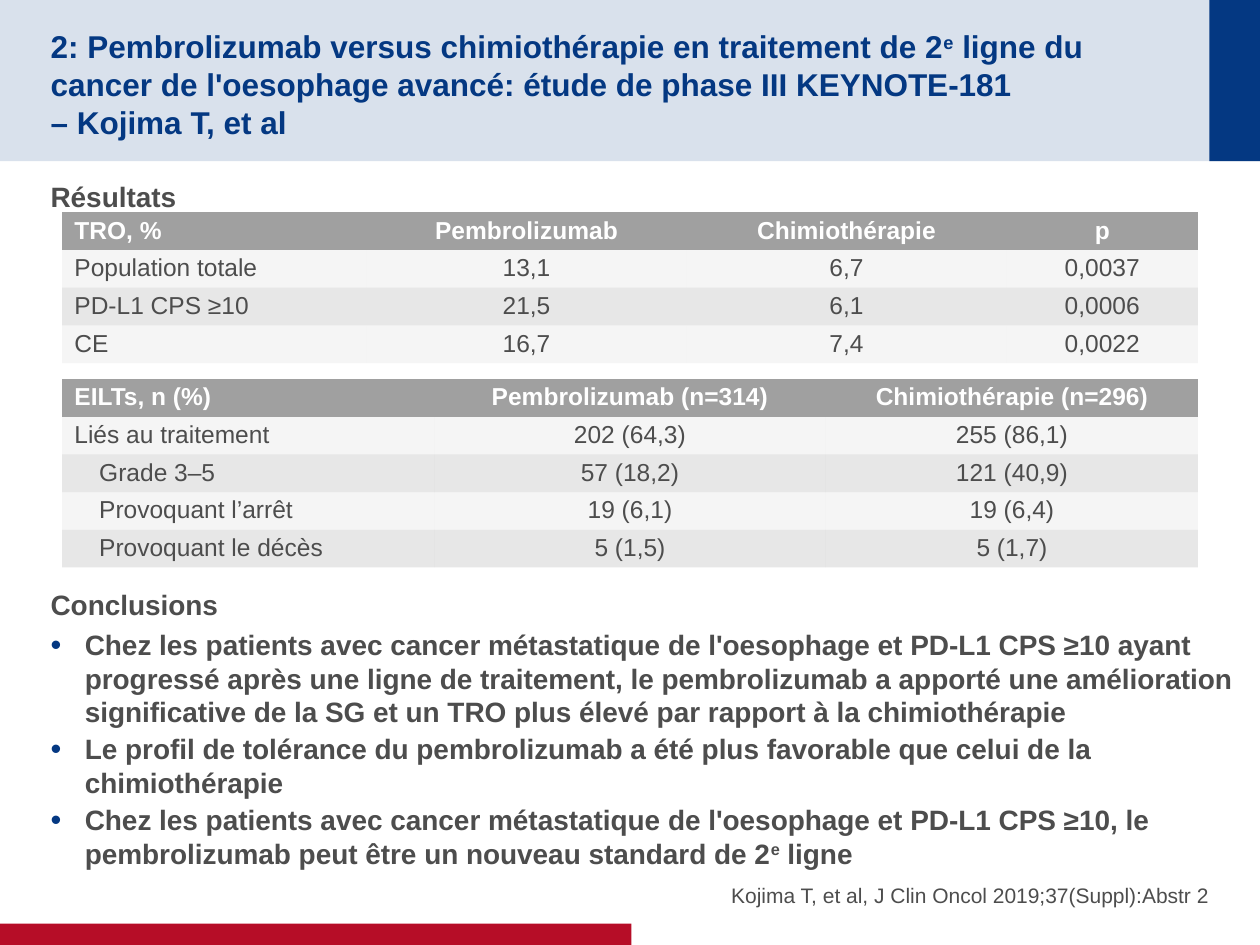
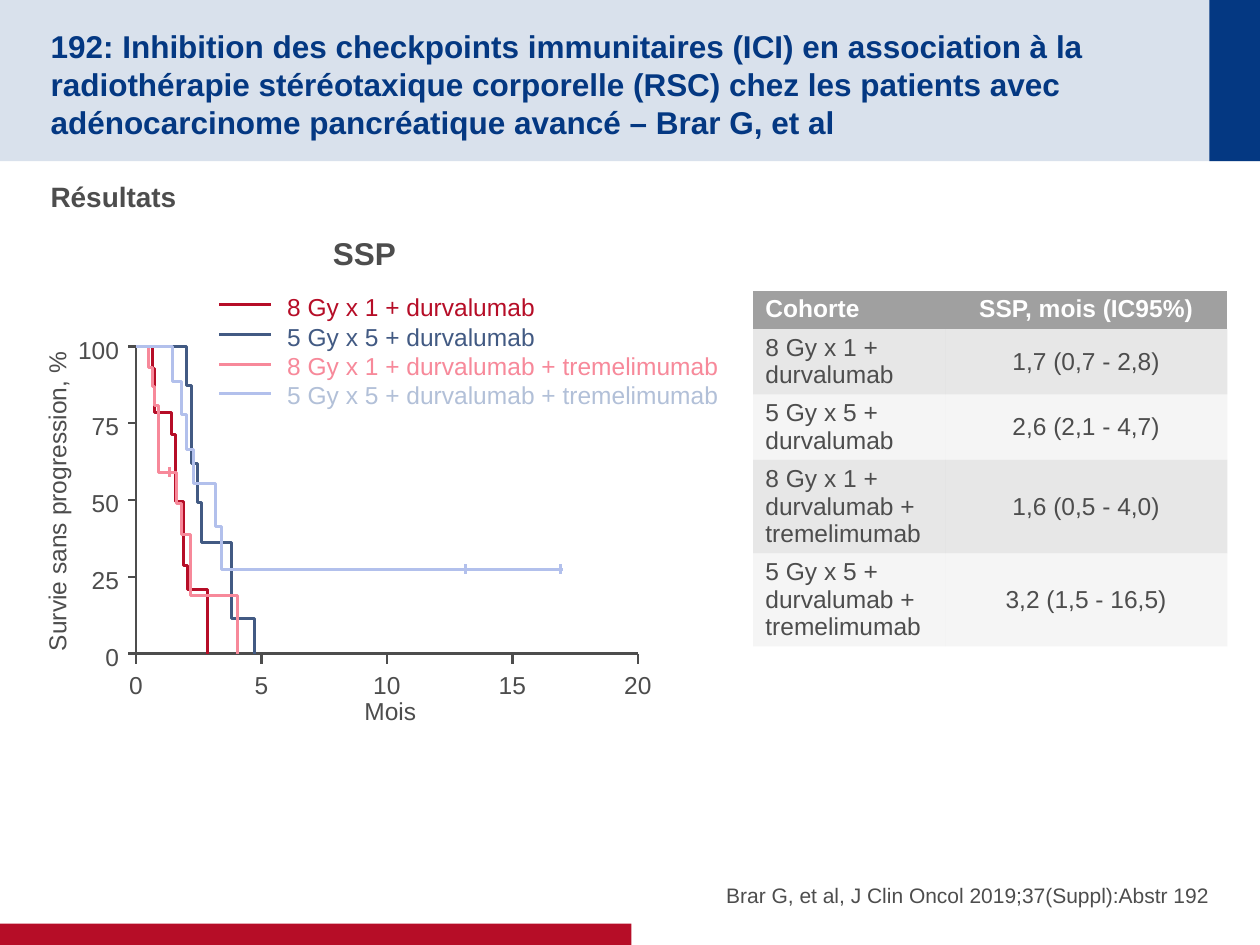
from dataclasses import dataclass

from lxml.etree import SubElement
from pptx import Presentation
from pptx.dml.color import RGBColor
from pptx.enum.shapes import MSO_CONNECTOR as Connector, MSO_SHAPE as Preset
from pptx.enum.text import MSO_ANCHOR as Anchor, MSO_AUTO_SIZE as AutoSize, PP_ALIGN as Align
from pptx.oxml.ns import qn
from pptx.util import Cm, Pt


@dataclass(frozen=True)
class Theme:
    font: str = "Arial"
    navy: str = "043882"
    red: str = "B60D27"
    text: str = "4D4D4D"
    grey: str = "A0A0A0"
    white: str = "FFFFFF"
    steel: str = "425A83"
    pink: str = "F7899A"
    pale_text: str = "B2C0D8"
    pale_line: str = "B2C0EC"
    title_size: int = 18
    body_size: int = 16
    small_size: int = 14
    citation_size: int = 12
    axis_width: float = 1.5
    curve_width: float = 1.75


THEME = Theme()
NO_STYLE_TABLE = "{2D5ABB26-0587-4C30-8999-92F81FD0307C}"


def write(paragraph, text, size=THEME.small_size, color=THEME.text, bold=False,
          align=Align.LEFT, before=0, after=0, indent=0, bullet=False):
    paragraph.alignment = align
    paragraph.space_before, paragraph.space_after = Pt(before), Pt(after)
    properties = paragraph._p.get_or_add_pPr()
    hanging = Cm(0.69) if bullet else 0
    properties.set("marL", str(Cm(indent) + hanging))
    properties.set("indent", str(-hanging))
    if bullet:
        bullet_color = SubElement(properties, qn("a:buClr"))
        SubElement(bullet_color, qn("a:srgbClr"), val=THEME.navy)
        SubElement(properties, qn("a:buSzPct"), val="110000")
        SubElement(properties, qn("a:buFont"), typeface=THEME.font)
        SubElement(properties, qn("a:buChar"), char="•")
    else:
        SubElement(properties, qn("a:buNone"))
    for part_number, part in enumerate(text.split("^")):
        for line_number, line in enumerate(part.split("\n")):
            if line_number:
                paragraph.add_line_break()
                SubElement(paragraph._p[-1], qn("a:rPr"), sz=str(size * 100))
            run = paragraph.add_run()
            run.text = line
            run.font.name, run.font.size, run.font.bold = THEME.font, Pt(size), bold
            run.font.color.rgb = RGBColor.from_string(color)
            if part_number % 2:
                run.font._element.set("baseline", "30000")


def paint(fill, properties, color, opacity=100):
    fill.solid()
    fill.fore_color.rgb = RGBColor.from_string(color)
    if opacity < 100:
        color_element = properties.find(qn("a:solidFill"))[0]
        SubElement(color_element, qn("a:alpha"), val=str(opacity * 1000))


def stroke(line, color, width):
    line.color.rgb = RGBColor.from_string(color)
    line.width = Pt(width)


class Deck:
    def __init__(self, theme):
        self.theme = theme
        self.presentation = Presentation()
        self.presentation.slide_width, self.presentation.slide_height = Cm(25.4), Cm(19.05)
        self.slide = None

    def add_slide(self, title, body, citation, body_width):
        first = self.slide is None
        self.slide = self.presentation.slides.add_slide(self.presentation.slide_layouts[3])
        if first:
            self.add_master_bands()
        heading, content, source = self.slide.placeholders
        self.fill_frame(heading, (1.02, 0.51, 22.89, 2.24),
                        [(title, dict(size=self.theme.title_size, color=self.theme.navy, bold=True))],
                        Anchor.MIDDLE, (0.13, 0))
        body_format = dict(size=self.theme.body_size, bold=True)
        self.fill_frame(content, (1.02, 3.48, body_width, 13.18),
                        [(text, body_format | extra) for text, extra in body],
                        margins=(0.13, 0.13))
        self.fill_frame(source, (12.9, 16.94, 11.48, 1.35),
                        [(citation, dict(size=self.theme.citation_size, align=Align.RIGHT, after=4))],
                        Anchor.BOTTOM)

    def add_master_bands(self):
        tree = self.presentation.slide_master.element.cSld.spTree
        bands = [
            ((0, 0, 25.4, 3.25), self.theme.navy, 15),
            ((24.38, 0, 1.02, 3.25), self.theme.navy, 100),
            ((0, 18.62, 12.73, 0.43), self.theme.red, 100),
        ]
        for number, (box, color, opacity) in enumerate(bands):
            band = self.slide.shapes.add_shape(Preset.RECTANGLE, *map(Cm, box))
            band.shadow.inherit = False
            paint(band.fill, band.element.spPr, color, opacity)
            band.line.fill.background()
            band.element.nvSpPr.cNvPr.set("id", str(100 + number))
            tree.insert(2 + number, band.element)

    def fill_frame(self, shape, box, paragraphs, anchor=Anchor.TOP, margins=(0, 0)):
        shape.left, shape.top, shape.width, shape.height = map(Cm, box)
        frame = shape.text_frame
        frame.auto_size, frame.word_wrap = AutoSize.NONE, True
        frame.vertical_anchor = anchor
        frame.margin_left = frame.margin_right = 0
        frame.margin_top, frame.margin_bottom = map(Cm, margins)
        for number, (text, text_format) in enumerate(paragraphs):
            paragraph = frame.add_paragraph() if number else frame.paragraphs[0]
            write(paragraph, text, **text_format)

    def add_text(self, box, paragraphs, anchor=Anchor.TOP, rotation=0):
        shape = self.slide.shapes.add_textbox(*map(Cm, box))
        self.fill_frame(shape, box, paragraphs, anchor)
        shape.rotation = rotation

    def add_label(self, text, center_x, center_y, width=2, align=Align.CENTER, rotation=0):
        height = 0.86
        box = (center_x - width / 2, center_y - height / 2, width, height)
        self.add_text(box, [(text, dict(align=align))], Anchor.MIDDLE, rotation)

    def add_line(self, start, end, color, width):
        line = self.slide.shapes.add_connector(Connector.STRAIGHT, *map(Cm, start + end))
        stroke(line.line, color, width)
        SubElement(line._element.spPr, qn("a:effectLst"))

    def add_outline(self, points, color, width):
        start, *rest = [(Cm(x), Cm(y)) for x, y in points]
        builder = self.slide.shapes.build_freeform(*start)
        builder.add_line_segments(rest, close=False)
        shape = builder.convert_to_shape()
        shape.shadow.inherit = False
        shape.fill.background()
        stroke(shape.line, color, width)

    def add_table(self, position, widths, rows, opacities=(10, 25), indented=(),
                  line_counts=None, anchor=Anchor.TOP):
        heights = [0.2 + 0.56 * count for count in line_counts or [1] * len(rows)]
        frame = self.slide.shapes.add_table(
            len(rows), len(widths), *map(Cm, (*position, sum(widths), sum(heights))))
        table = frame.table
        table.horz_banding = False
        table._tbl.tblPr.find(qn("a:tableStyleId")).text = NO_STYLE_TABLE
        for column, width in zip(table.columns, widths):
            column.width = Cm(width)
        for row_number, (values, height) in enumerate(zip(rows, heights)):
            header = row_number == 0
            table.rows[row_number].height = Cm(height)
            for column_number, value in enumerate(values):
                cell = table.cell(row_number, column_number)
                cell.margin_left = cell.margin_right = Cm(0.25)
                cell.margin_top = cell.margin_bottom = Cm(0.09)
                cell.vertical_anchor = Anchor.TOP if header else anchor
                paint(cell.fill, cell._tc.get_or_add_tcPr(), self.theme.grey,
                      100 if header else opacities[(row_number - 1) % 2])
                first_column = column_number == 0
                write(cell.text_frame.paragraphs[0], value, bold=header,
                      color=self.theme.white if header else self.theme.text,
                      align=Align.LEFT if first_column else Align.CENTER,
                      indent=0.5 if first_column and row_number in indented else 0)


def at(month, percent):
    return 2.74 + 0.506 * month, 13.18 - 0.062 * percent


def survival_steps(drops, last_month=None):
    points, level = [(0, 100)], 100
    for month, percent in drops:
        points += [(month, level), (month, percent)]
        level = percent
    if last_month:
        points.append((last_month, level))
    return [at(*point) for point in points]


def add_survival_plot(deck):
    theme = deck.theme
    axis = (theme.text, theme.axis_width)
    deck.add_outline([at(0, 100), at(0, 0), at(20, 0)], *axis)
    for percent in range(0, 101, 25):
        x, y = at(0, percent)
        deck.add_line((x - 0.15, y), (x, y), *axis)
        deck.add_label(str(percent), 1.4, y + 0.06, align=Align.RIGHT)
    for month in range(0, 21, 5):
        x, y = at(month, 0)
        deck.add_line((x, y), (x, y + 0.2), *axis)
        deck.add_label(str(month), x, 13.8)
    deck.add_label("Mois", 7.87, 14.33)
    deck.add_label("Survie sans progression, %", 1.14, 10.11, width=6.7, rotation=270)
    deck.add_text((6.71, 4.72, 2, 0.8), [("SSP", dict(size=theme.title_size, bold=True))])

    curves = [
        ("8 Gy x 1 + durvalumab", theme.red, theme.red,
         [(0.65, 92.6), (0.75, 78.3), (1.4, 71.3), (1.56, 49.6), (1.91, 28.7), (2.06, 20.9),
          (2.86, 0)], None, []),
        ("5 Gy x 5 + durvalumab", theme.steel, theme.steel,
         [(2.01, 87.3), (2.21, 61.9), (2.46, 49.2), (2.61, 36.1), (3.81, 11.5), (4.72, 0)],
         None, []),
        ("8 Gy x 1 + durvalumab + tremelimumab", theme.pink, theme.pink,
         [(0.5, 93), (0.65, 86.9), (0.75, 80.7), (0.9, 59), (1.61, 48.8), (1.81, 38.9),
          (2.16, 18.9), (4.04, 0)], None, [(1.35, 59)]),
        ("5 Gy x 5 + durvalumab + tremelimumab", theme.pale_text, theme.pale_line,
         [(1.46, 88.5), (1.81, 77.9), (2.01, 66.4), (2.31, 55.3), (3.16, 41.4), (3.41, 27.5)],
         17, [(13.15, 27.5), (16.9, 27.5)]),
    ]
    for number, (_, _, color, drops, last_month, censored) in enumerate(curves):
        legend_y = 6.14 + 0.6 * number
        deck.add_line((4.42, legend_y), (5.46, legend_y), color, theme.curve_width)
        deck.add_outline(survival_steps(drops, last_month), color, theme.curve_width)
        for x, y in (at(*point) for point in censored):
            deck.add_line((x, y - 0.1), (x, y + 0.1), color, theme.curve_width)
    deck.add_text((5.79, 5.89, 9.2, 2.4),
                  [(name, dict(color=color)) for name, color, *_ in curves])


def add_keynote_slide(deck):
    conclusions = [
        "Chez les patients avec cancer métastatique de l'oesophage et PD-L1 CPS ≥10 ayant progressé "
        "après une ligne de traitement, le pembrolizumab a apporté une amélioration significative "
        "de la SG et un TRO plus élevé par rapport à la chimiothérapie",
        "Le profil de tolérance du pembrolizumab a été plus favorable que celui de la chimiothérapie",
        "Chez les patients avec cancer métastatique de l'oesophage et PD-L1 CPS ≥10, le "
        "pembrolizumab peut être un nouveau standard de 2^e^ ligne",
    ]
    deck.add_slide(
        "2: Pembrolizumab versus chimiothérapie en traitement de 2^e^ ligne du cancer de "
        "l'oesophage avancé: étude de phase III KEYNOTE-181\n– Kojima T, et al",
        [("Résultats", dict(after=4)), ("Conclusions", dict(before=210, after=4))]
        + [(text, dict(after=2, bullet=True)) for text in conclusions],
        "Kojima T, et al, J Clin Oncol 2019;37(Suppl):Abstr 2", body_width=24)
    deck.add_table((1.25, 7.64), (7.5, 7.9, 7.5), [
        ("EILTs, n (%)", "Pembrolizumab (n=314)", "Chimiothérapie (n=296)"),
        ("Liés au traitement", "202 (64,3)", "255 (86,1)"),
        ("Grade 3–5", "57 (18,2)", "121 (40,9)"),
        ("Provoquant l’arrêt", "19 (6,1)", "19 (6,4)"),
        ("Provoquant le décès", "5 (1,5)", "5 (1,7)"),
    ], indented=(2, 3, 4))
    deck.add_table((1.25, 4.28), (6.14, 6.45, 6.45, 3.86), [
        ("TRO, %", "Pembrolizumab", "Chimiothérapie", "p"),
        ("Population totale", "13,1", "6,7", "0,0037"),
        ("PD-L1 CPS ≥10", "21,5", "6,1", "0,0006"),
        ("CE", "16,7", "7,4", "0,0022"),
    ])


def add_radiotherapy_slide(deck):
    deck.add_slide(
        "192: Inhibition des checkpoints immunitaires (ICI) en association à la radiothérapie "
        "stéréotaxique corporelle (RSC) chez les patients avec adénocarcinome pancréatique avancé "
        "– Brar G, et al",
        [("Résultats", dict(after=4))],
        "Brar G, et al, J Clin Oncol 2019;37(Suppl):Abstr 192", body_width=23.37)
    deck.add_table((15.18, 5.87), (3.87, 5.69), [
        ("Cohorte", "SSP, mois (IC95%)"),
        ("8 Gy x 1 + durvalumab", "1,7 (0,7 - 2,8)"),
        ("5 Gy x 5 + durvalumab", "2,6 (2,1 - 4,7)"),
        ("8 Gy x 1 + durvalumab + tremelimumab", "1,6 (0,5 - 4,0)"),
        ("5 Gy x 5 + durvalumab + tremelimumab", "3,2 (1,5 - 16,5)"),
    ], opacities=(25, 10), line_counts=(1, 2, 2, 3, 3), anchor=Anchor.MIDDLE)
    add_survival_plot(deck)


def main():
    deck = Deck(THEME)
    add_keynote_slide(deck)
    add_radiotherapy_slide(deck)
    deck.presentation.save("out.pptx")


if __name__ == "__main__":
    main()
